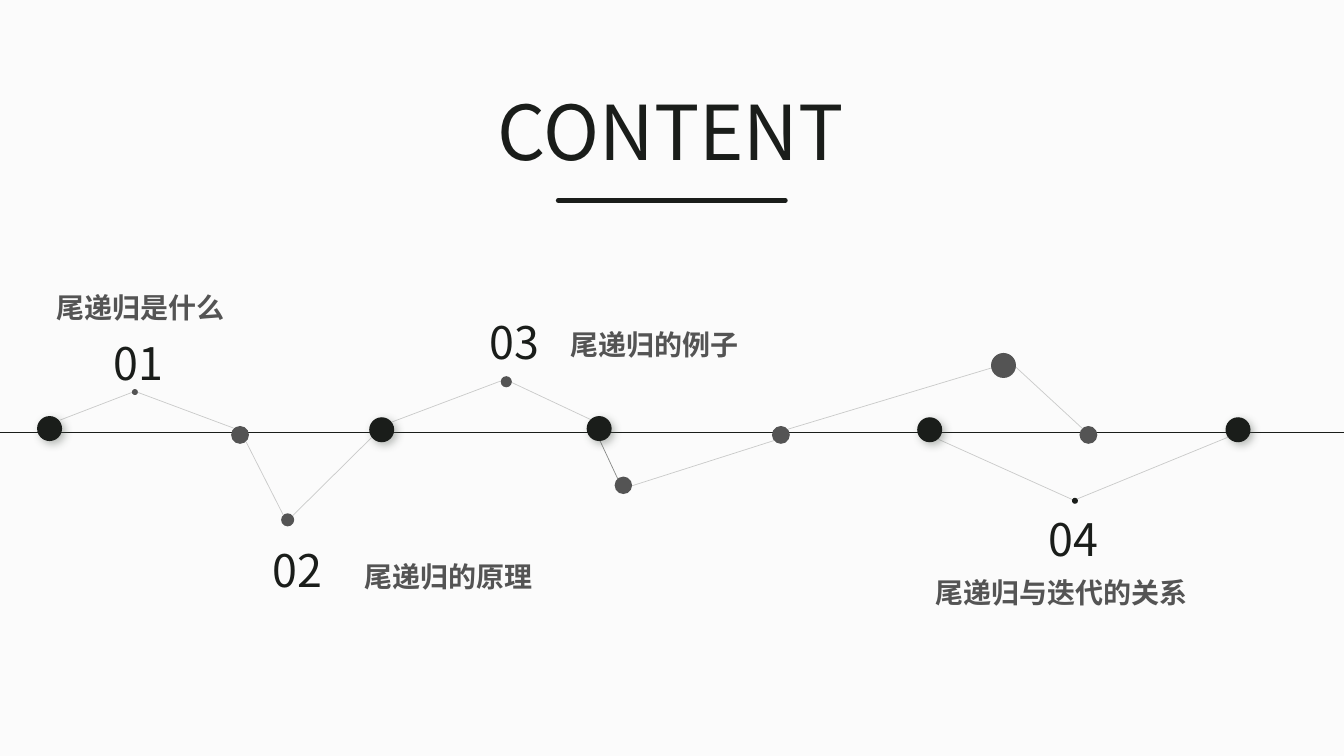
from lxml import etree
from pptx import Presentation
from pptx import util as u
from pptx.dml import color
from pptx.enum import shapes, text
from pptx.oxml import ns

COLOURS = {"paper": "FBFBFB", "ink": "1A1D1A", "grey": "545454", "shadow": "505950"}
FONT = "Noto Sans CJK SC"

AXIS_NODES = [
    (6.05, 10.96, 0.45, "grey"),
    (1.25, 10.8, 0.63, "ink"),
    (9.62, 10.83, 0.63, "ink"),
    (19.68, 10.96, 0.45, "grey"),
    (15.1, 10.8, 0.63, "ink"),
    (23.43, 10.83, 0.63, "ink"),
    (27.43, 10.96, 0.45, "grey"),
    (31.2, 10.83, 0.63, "ink"),
]
OUTER_NODES = [
    (7.25, 13.1, 0.33, "grey"),
    (12.76, 9.62, 0.28, "grey"),
    (15.71, 12.23, 0.44, "grey"),
    (25.29, 9.21, 0.63, "grey"),
    (3.4, 9.88, 0.15, "grey"),
    (27.09, 12.62, 0.15, "ink"),
]
LINKS = [
    (1.5, 10.59, 3.4, 9.86, 21),
    (3.4, 9.86, 5.92, 10.8, 21),
    (6.2, 11.13, 7.14, 12.98, 21),
    (7.37, 13, 9.37, 11.02, 21),
    (9.86, 10.64, 12.62, 9.6, 21),
    (14.88, 10.57, 12.88, 9.63, 21),
    (15.01, 10.87, 15.57, 12.07, 51),
    (19.51, 11.1, 15.93, 12.24, 21),
    (24.99, 9.27, 19.84, 10.82, 21),
    (27.28, 10.8, 25.6, 9.25, 21),
    (27.05, 12.6, 23.65, 11.07, 21),
    (30.94, 11.02, 27.08, 12.6, 21),
]
CHAPTERS = [
    ("01", 1.04, 8.33, "尾递归是什么", 1.17, 7.19, 9.19, True),
    ("02", 5.05, 13.56, "尾递归的原理", 8.94, 13.97, 4.9, True),
    ("03", 10.52, 7.8, "尾递归的例子", 14.12, 8.13, 4.78, False),
    ("04", 24.61, 12.78, "尾递归与迭代的关系", 23.32, 14.38, 6.93, False),
]


def rgb(name):
    return color.RGBColor.from_string(COLOURS[name])


def add_child(parent, tag, **attributes):
    return etree.SubElement(parent, ns.qn(tag), {key: str(value) for key, value in attributes.items()})


def add_text(page, words, left, top, width, height, size, tone, bold=False, centred=False, wrap=True):
    box = page.shapes.add_textbox(u.Cm(left), u.Cm(top), u.Cm(width), u.Cm(height))
    box.text_frame.word_wrap = wrap
    box.text_frame.auto_size = text.MSO_AUTO_SIZE.SHAPE_TO_FIT_TEXT
    box.text_frame.text = words
    para = box.text_frame.paragraphs[0]
    para.alignment = text.PP_ALIGN.CENTER if centred else text.PP_ALIGN.LEFT
    span = para.runs[0]
    span.font.size = u.Pt(size)
    span.font.bold = bold
    span.font.color.rgb = rgb(tone)
    span.font.name = FONT
    add_child(span.font._element, "a:ea", typeface=FONT)


def add_line(page, x1, y1, x2, y2, weight, opacity=100, rounded=False):
    line = page.shapes.add_connector(
        shapes.MSO_CONNECTOR.STRAIGHT, u.Cm(x1), u.Cm(y1), u.Cm(x2), u.Cm(y2))
    line.line.width = u.Pt(weight)
    line.line.color.rgb = rgb("ink")
    properties = line._element.spPr
    add_child(properties, "a:effectLst")
    if opacity < 100:
        add_child(properties.find(".//" + ns.qn("a:srgbClr")), "a:alpha", val=opacity * 1000)
    if rounded:
        properties.find(ns.qn("a:ln")).set("cap", "rnd")


def add_shadow(shape):
    effects = shape._element.spPr.find(ns.qn("a:effectLst"))
    shadow = add_child(effects, "a:outerShdw", blurRad=u.Pt(6), dist=u.Pt(3),
                       dir=45 * 60000, algn="tl", rotWithShape=0)
    tone = add_child(shadow, "a:srgbClr", val=COLOURS["shadow"])
    add_child(tone, "a:alpha", val=40000)


def add_node(page, x, y, diameter, tone, raised=False):
    node = page.shapes.add_shape(
        shapes.MSO_SHAPE.OVAL, u.Cm(x - diameter / 2), u.Cm(y - diameter / 2),
        u.Cm(diameter), u.Cm(diameter))
    node.shadow.inherit = False
    node.fill.solid()
    node.fill.fore_color.rgb = rgb(tone)
    node.line.fill.background()
    if raised:
        add_shadow(node)


def add_chapter(page, number, left, top, title, title_left, title_top, title_width, wrap):
    add_text(page, number, left, top, 4.9, 1.63, 32, "ink", centred=True)
    add_text(page, title, title_left, title_top, title_width, 1.12, 20, "grey", bold=True, wrap=wrap)


def main():
    deck = Presentation()
    deck.slide_width, deck.slide_height = u.Cm(33.87), u.Cm(19.05)
    page = deck.slides.add_slide(deck.slide_layouts[6])
    page.background.fill.solid()
    page.background.fill.fore_color.rgb = rgb("paper")

    add_text(page, "CONTENT", 12.29, 2.01, 9.27, 2.57, 54, "ink", wrap=False)
    add_line(page, 14.07, 5.05, 19.79, 5.05, 3.5, rounded=True)
    add_line(page, 0, 10.9, 33.87, 10.9, 0.75)
    for x, y, diameter, tone in AXIS_NODES:
        add_node(page, x, y, diameter, tone, raised=tone == "ink")
    for x1, y1, x2, y2, opacity in LINKS:
        add_line(page, x1, y1, x2, y2, 0.5, opacity)
    for node in OUTER_NODES:
        add_node(page, *node)
    for chapter in CHAPTERS:
        add_chapter(page, *chapter)

    deck.save("out.pptx")


if __name__ == "__main__":
    main()
